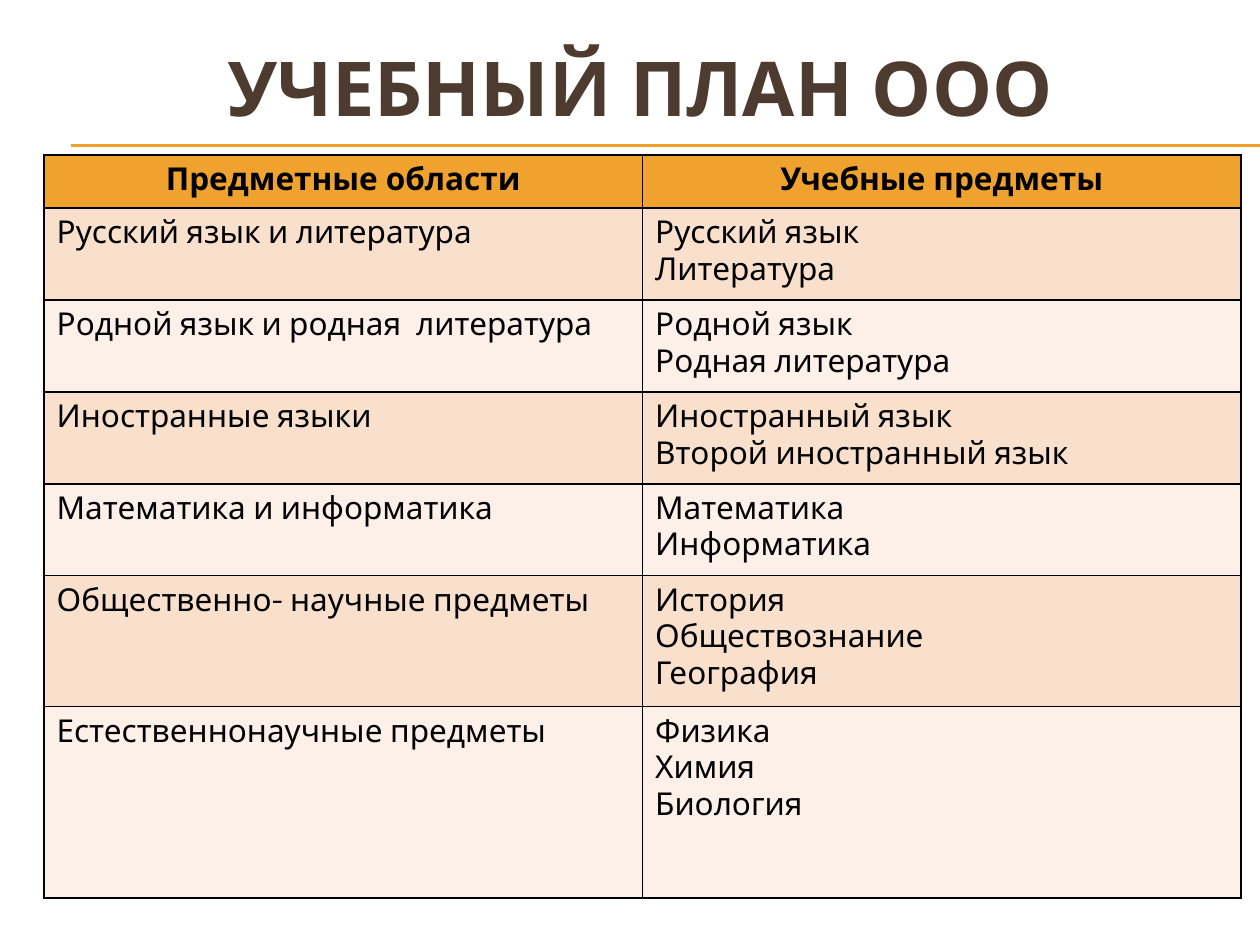
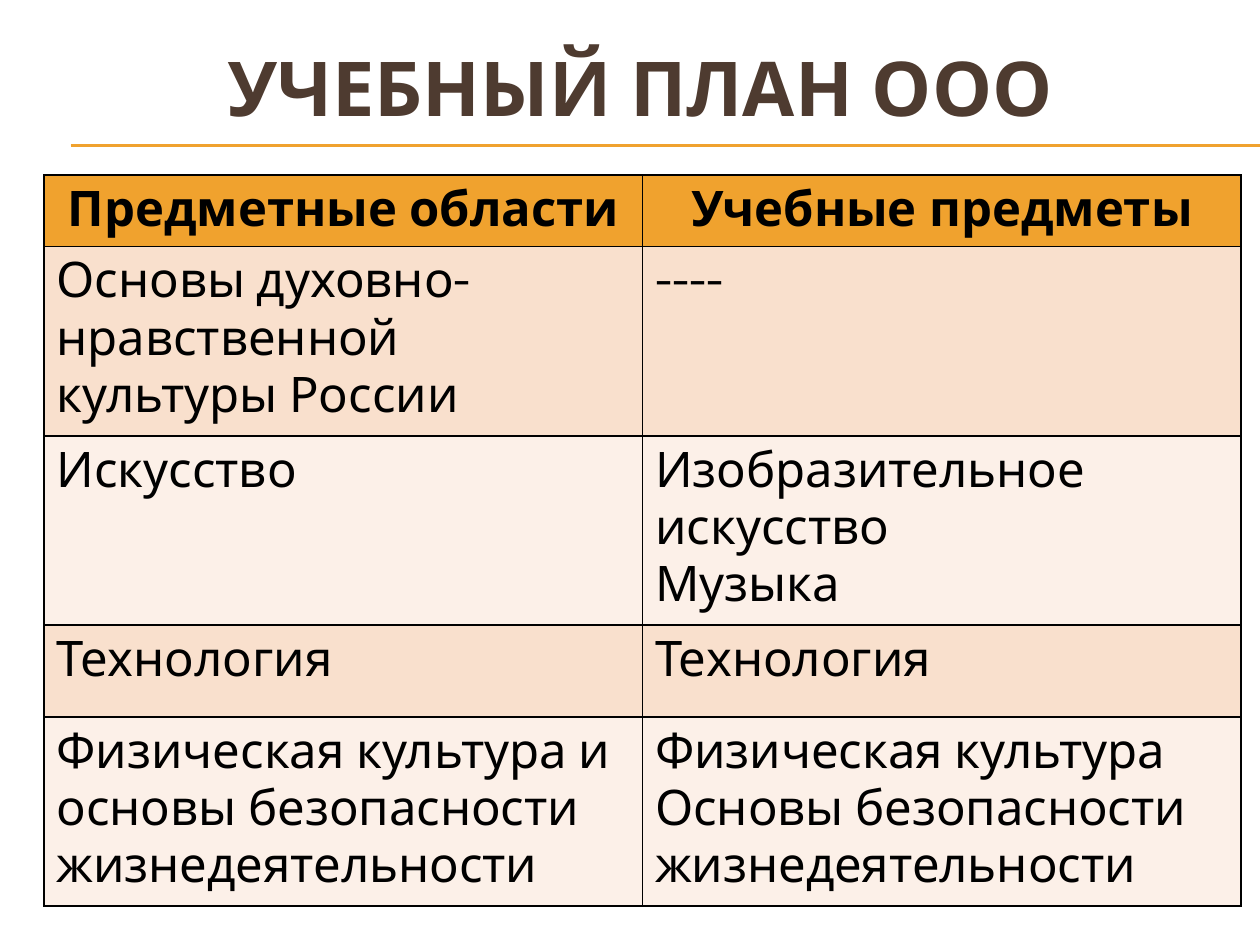
from dataclasses import dataclass

from lxml.etree import SubElement
from pptx import Presentation
from pptx.dml.color import RGBColor
from pptx.enum.shapes import MSO_CONNECTOR
from pptx.enum.text import MSO_ANCHOR, PP_ALIGN
from pptx.oxml.ns import qn
from pptx.slide import Slide
from pptx.table import _Cell
from pptx.text.text import TextFrame
from pptx.util import Inches, Pt

FONT = "Karla"
BLACK = RGBColor(0x00, 0x00, 0x00)
BROWN = RGBColor(0x4E, 0x3B, 0x30)
ORANGE = RGBColor(0xF0, 0xA2, 0x2E)
BANDS = (RGBColor(0xF9, 0xE0, 0xCD), RGBColor(0xFC, 0xF0, 0xE8))

TITLE = "УЧЕБНЫЙ ПЛАН ООО"
HEADINGS = ("Предметные области", "Учебные предметы")
RULE_HEIGHTS = (1.15, 1.16)
COLUMN_WIDTH = 4.75


@dataclass(frozen=True)
class TextStyle:
    size: float
    color: RGBColor = BLACK
    bold: bool = False
    align: PP_ALIGN = PP_ALIGN.LEFT


@dataclass(frozen=True)
class SubjectArea:
    name: str
    subjects: tuple[str, ...]
    height: float


@dataclass(frozen=True)
class Curriculum:
    top: float
    size: float
    heading_height: float
    areas: tuple[SubjectArea, ...]


CURRICULA = (
    Curriculum(1.23, 18, 0.42, (
        SubjectArea("Русский язык и литература", ("Русский язык", "Литература"), 0.73),
        SubjectArea("Родной язык и родная  литература", ("Родной язык", "Родная литература"), 0.73),
        SubjectArea("Иностранные языки", ("Иностранный язык", "Второй иностранный язык"), 0.73),
        SubjectArea("Математика и информатика", ("Математика", "Информатика"), 0.73),
        SubjectArea("Общественно- научные предметы", ("История", "Обществознание", "География"), 1.04),
        SubjectArea("Естественнонаучные предметы", ("Физика", "Химия", "Биология"), 1.52),
    )),
    Curriculum(1.39, 28, 0.55, (
        SubjectArea("Основы духовно-нравственной культуры России", ("----",), 1.46),
        SubjectArea("Искусство", ("Изобразительное искусство", "Музыка"), 1.46),
        SubjectArea("Технология", ("Технология",), 0.73),
        SubjectArea("Физическая культура и основы безопасности жизнедеятельности",
                    ("Физическая культура", "Основы безопасности жизнедеятельности"), 1.46),
    )),
)


def write_lines(frame: TextFrame, lines: tuple[str, ...], style: TextStyle) -> None:
    for index, line in enumerate(lines):
        para = frame.add_paragraph() if index else frame.paragraphs[0]
        para.alignment = style.align
        span = para.add_run()
        span.text = line
        span.font.name = FONT
        span.font.size = Pt(style.size)
        span.font.bold = style.bold
        span.font.color.rgb = style.color


def add_rules(page: Slide) -> None:
    for height in RULE_HEIGHTS:
        rule = page.shapes.add_connector(
            MSO_CONNECTOR.STRAIGHT, Inches(0.56), Inches(height), Inches(10), Inches(height))
        rule.line.color.rgb = ORANGE
        rule.line.width = Pt(0.75)
        SubElement(rule.element.spPr, qn("a:effectLst"))


def add_title(page: Slide) -> None:
    box = page.shapes.add_textbox(Inches(0.33), Inches(0.29), Inches(9.5), Inches(0.79))
    box.text_frame.word_wrap = True
    box.text_frame.vertical_anchor = MSO_ANCHOR.MIDDLE
    write_lines(box.text_frame, (TITLE,), TextStyle(43.2, BROWN, True, PP_ALIGN.CENTER))


def add_borders(cell: _Cell) -> None:
    """Borders go in before the fill, as the cell's schema demands."""
    properties = cell._tc.get_or_add_tcPr()
    for side in ("lnL", "lnR", "lnT", "lnB"):
        border = SubElement(properties, qn(f"a:{side}"), w=str(Pt(1)))
        fill = SubElement(border, qn("a:solidFill"))
        SubElement(fill, qn("a:srgbClr"), val=str(BLACK))


def fill_cell(cell: _Cell, lines: tuple[str, ...], style: TextStyle, color: RGBColor) -> None:
    add_borders(cell)
    cell.fill.solid()
    cell.fill.fore_color.rgb = color
    write_lines(cell.text_frame, lines, style)


def add_curriculum(page: Slide, plan: Curriculum) -> None:
    heights = [plan.heading_height, *(area.height for area in plan.areas)]
    table = page.shapes.add_table(
        len(heights), len(HEADINGS), Inches(0.35), Inches(plan.top),
        Inches(COLUMN_WIDTH * len(HEADINGS)), Inches(sum(heights))).table
    for row, height in zip(table.rows, heights):
        row.height = Inches(height)

    heading = TextStyle(plan.size, bold=True, align=PP_ALIGN.CENTER)
    for column, text in enumerate(HEADINGS):
        table.columns[column].width = Inches(COLUMN_WIDTH)
        fill_cell(table.cell(0, column), (text,), heading, ORANGE)

    body = TextStyle(plan.size)
    for index, area in enumerate(plan.areas):
        band = BANDS[index % len(BANDS)]
        for column, lines in enumerate(((area.name,), area.subjects)):
            fill_cell(table.cell(index + 1, column), lines, body, band)


def main() -> None:
    deck = Presentation()
    deck.slide_width = Inches(10)
    deck.slide_height = Inches(7.5)
    for plan in CURRICULA:
        page = deck.slides.add_slide(deck.slide_layouts[6])
        add_rules(page)
        add_title(page)
        add_curriculum(page, plan)
    deck.save("out.pptx")


if __name__ == "__main__":
    main()
